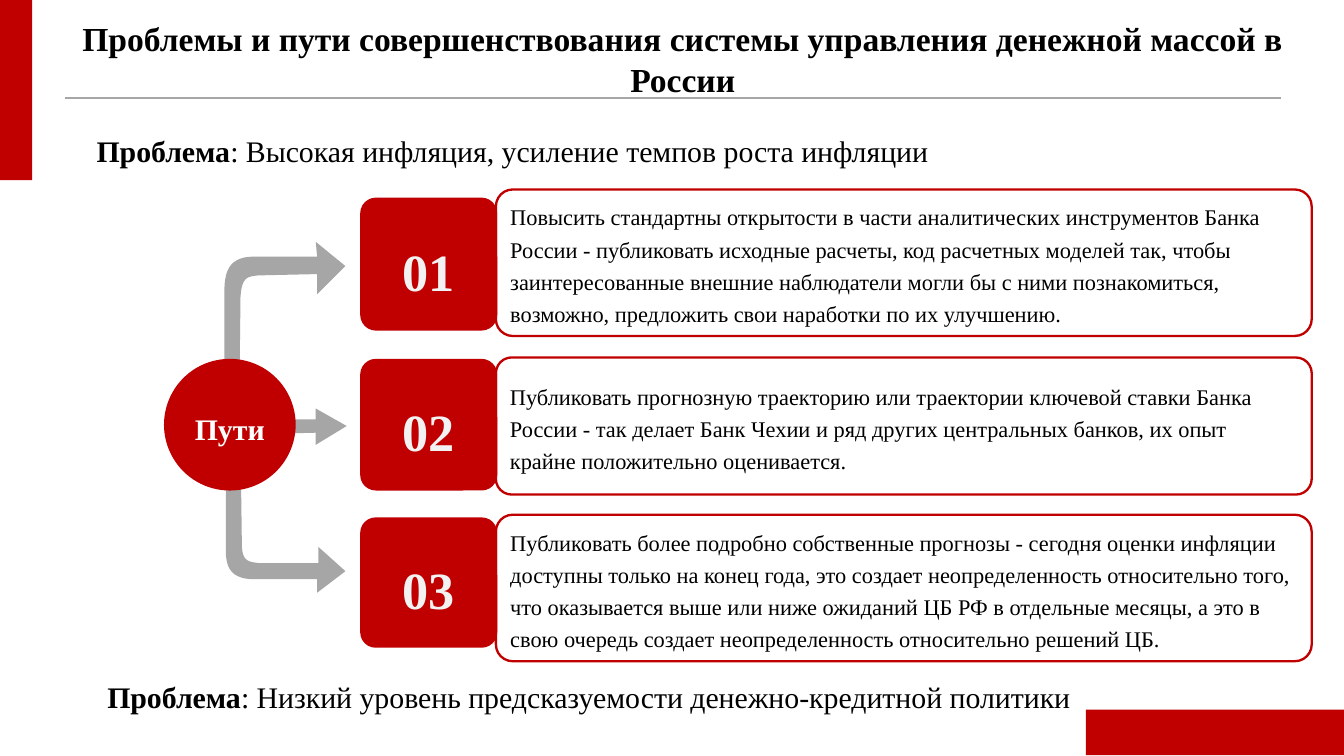
from lxml import etree
from pptx import Presentation
from pptx.dml.color import RGBColor
from pptx.enum.shapes import MSO_CONNECTOR, MSO_SHAPE
from pptx.enum.text import MSO_ANCHOR, MSO_AUTO_SIZE, PP_ALIGN
from pptx.oxml.ns import qn
from pptx.util import Inches, Pt

RED = RGBColor(0xC0, 0x00, 0x00)
GRAY = RGBColor(0xA6, 0xA6, 0xA6)
BLACK = RGBColor(0x00, 0x00, 0x00)
WHITE = RGBColor(0xFF, 0xFF, 0xFF)
PALE = RGBColor(0xF2, 0xF2, 0xF2)
FONT = "Times New Roman"

RECTANGLE = MSO_SHAPE.RECTANGLE
ROUNDED = MSO_SHAPE.ROUNDED_RECTANGLE
OVAL = MSO_SHAPE.OVAL
STRAIGHT = MSO_CONNECTOR.STRAIGHT
CENTER, LEFT = PP_ALIGN.CENTER, PP_ALIGN.LEFT
MIDDLE = MSO_ANCHOR.MIDDLE
NO_FIT = MSO_AUTO_SIZE.NONE

TITLE = ("Проблемы и пути совершенствования системы управления "
         "денежной массой в России")
PROBLEMS = [
    ((0.62, 0.94, 6.42, 0.37),
     ": Высокая инфляция, усиление темпов роста инфляции"),
    ((0.7, 5, 7.41, 0.37),
     ": Низкий уровень предсказуемости денежно-кредитной политики"),
]
# Top and height of the text frame, top and height of the number tile, text
WAYS = [
    (1.41, 1.09, 1.47, 0.99,
     "Повысить стандартны открытости в части аналитических инструментов Банка "
     "России - публиковать исходные расчеты, код расчетных моделей так, чтобы "
     "заинтересованные внешние наблюдатели могли бы с ними познакомиться, "
     "возможно, предложить свои наработки по их улучшению."),
    (2.66, 1.02, 2.67, 0.98,
     "Публиковать прогнозную траекторию или траектории ключевой ставки Банка "
     "России - так делает Банк Чехии и ряд других центральных банков, их опыт "
     "крайне положительно оценивается."),
    (3.83, 1.09, 3.85, 0.97,
     "Публиковать более подробно собственные прогнозы - сегодня оценки инфляции "
     "доступны только на конец года, это создает неопределенность относительно "
     "того, что оказывается выше или ниже ожиданий ЦБ РФ в отдельные месяцы, а "
     "это в свою очередь создает неопределенность относительно решений ЦБ."),
]
# Two numbers are a corner, six are a cubic curve
ARROW_DOWN = [
    (1.79, 3.31), (1.8, 4.05), (1.8, 4.18, 1.85, 4.18, 1.93, 4.19),
    (2.37, 4.19), (2.37, 4.07), (2.57, 4.25), (2.36, 4.41), (2.36, 4.31),
    (1.9, 4.31), (1.73, 4.31, 1.68, 4.24, 1.68, 4.09),
    (1.68, 3.29), (1.69, 3.16, 1.76, 3.17, 1.79, 3.31),
]
ARROW_RIGHT = [
    (1.51, 3.24), (2.35, 3.22), (2.35, 3.31), (2.58, 3.17),
    (2.35, 3.04), (2.35, 3.12), (1.51, 3.12),
]
ARROW_UP = [
    (1.78, 3.07), (1.79, 2.21), (1.8, 2.06, 1.84, 2.06, 1.92, 2.05),
    (2.36, 2.04), (2.36, 2.19), (2.57, 1.98), (2.35, 1.8), (2.36, 1.91),
    (1.89, 1.91), (1.73, 1.91, 1.67, 1.99, 1.67, 2.16),
    (1.67, 3.09), (1.69, 3.24, 1.76, 3.23, 1.78, 3.07),
]


def write(para, text, size, color, bold=False):
    span = para.add_run()
    span.text = text
    span.font.color.rgb = color
    style = {"name": FONT, "size": Pt(size), "bold": bold}
    for name, value in style.items():
        setattr(span.font, name, value)


def add_title(page):
    title = page.shapes.title
    place = zip(("left", "top", "width", "height"), (0.39, 0.08, 9.38, 0.71))
    for name, value in place:
        setattr(title, name, Inches(value))
    frame = title.text_frame
    frame.auto_size = NO_FIT
    frame.vertical_anchor = MIDDLE
    para = frame.paragraphs[0]
    para.alignment = CENTER
    write(para, TITLE, 18, BLACK, True)


def add_rule(page):
    start, end, y = Inches(0.48), Inches(9.53), Inches(0.73)
    rule = page.shapes.add_connector(STRAIGHT, start, y, end, y)
    rule.line.color.rgb = GRAY
    rule.line.width = Pt(1)
    etree.SubElement(rule._element.spPr, qn("a:effectLst"))


def add_block(page, kind, place, fill=None, corner=None):
    """Add a filled shape, or a red outline when no fill is given."""
    block = page.shapes.add_shape(kind, *map(Inches, place))
    block.shadow.inherit = False
    if corner:
        block.adjustments[0] = corner
    if fill is None:
        block.fill.background()
        block.line.color.rgb = RED
        block.line.width = Pt(1.25)
    else:
        block.fill.solid()
        block.fill.fore_color.rgb = fill
        block.line.fill.background()
    return block


def label(block, text, size, color, bold=True, align=CENTER):
    frame = block.text_frame
    layout = {
        "word_wrap": True, "vertical_anchor": MIDDLE,
        "margin_left": Inches(0.07), "margin_right": Inches(0.07),
        "margin_top": Inches(0.03), "margin_bottom": Inches(0.03),
    }
    for name, value in layout.items():
        setattr(frame, name, value)
    para = frame.paragraphs[0]
    para.alignment = align
    para.line_spacing = 1.2
    write(para, text, size, color, bold)


def curve_points(start, curve, steps=12):
    """Return points along a cubic curve, without its start."""
    points = [start, curve[:2], curve[2:4], curve[4:]]
    result = []
    for step in range(1, steps + 1):
        t = step / steps
        weights = ((1 - t) ** 3, 3 * t * (1 - t) ** 2, 3 * t * t * (1 - t), t ** 3)
        result.append(tuple(sum(w * p[axis] for w, p in zip(weights, points))
                            for axis in (0, 1)))
    return result


def add_arrow(page, outline):
    points = [outline[0]]
    for part in outline[1:]:
        points += [part] if len(part) == 2 else curve_points(points[-1], part)
    corners = [(Inches(x), Inches(y)) for x, y in points]
    builder = page.shapes.build_freeform(*corners[0])
    builder.add_line_segments(corners[1:], close=True)
    arrow = builder.convert_to_shape()
    arrow.shadow.inherit = False
    arrow.fill.solid()
    arrow.fill.fore_color.rgb = GRAY
    arrow.line.fill.background()


def add_problem(page, place, text):
    box = page.shapes.add_textbox(*map(Inches, place))
    box.text_frame.word_wrap = False
    para = box.text_frame.paragraphs[0]
    write(para, "Проблема", 16, BLACK, True)
    write(para, text, 16, BLACK)


def main():
    deck = Presentation()
    deck.slide_width = Inches(10)
    deck.slide_height = deck.slide_width * 9 // 16
    page = deck.slides.add_slide(deck.slide_layouts[5])
    add_rule(page)
    add_title(page)
    for outline in (ARROW_DOWN, ARROW_RIGHT, ARROW_UP):
        add_arrow(page, outline)
    for number, (top, height, tile_top, tile_height, text) in enumerate(WAYS, 1):
        frame = add_block(page, ROUNDED, (3.69, top, 6.07, height), corner=0.115)
        label(frame, text, 12, BLACK, False, LEFT)
        tile = add_block(page, ROUNDED, (2.68, tile_top, 1.02, tile_height), RED, 0.119)
        label(tile, f"{number:02}", 28, PALE)
    hub = add_block(page, OVAL, (1.22, 2.67, 0.98, 0.98), RED)
    label(hub, "Пути", 16, WHITE)
    for place, text in PROBLEMS:
        add_problem(page, place, text)
    add_block(page, RECTANGLE, (0, 0, 0.24, 1.34), RED)
    add_block(page, RECTANGLE, (8.08, 5.28, 1.92, 0.34), RED)
    deck.save("out.pptx")


if __name__ == "__main__":
    main()
